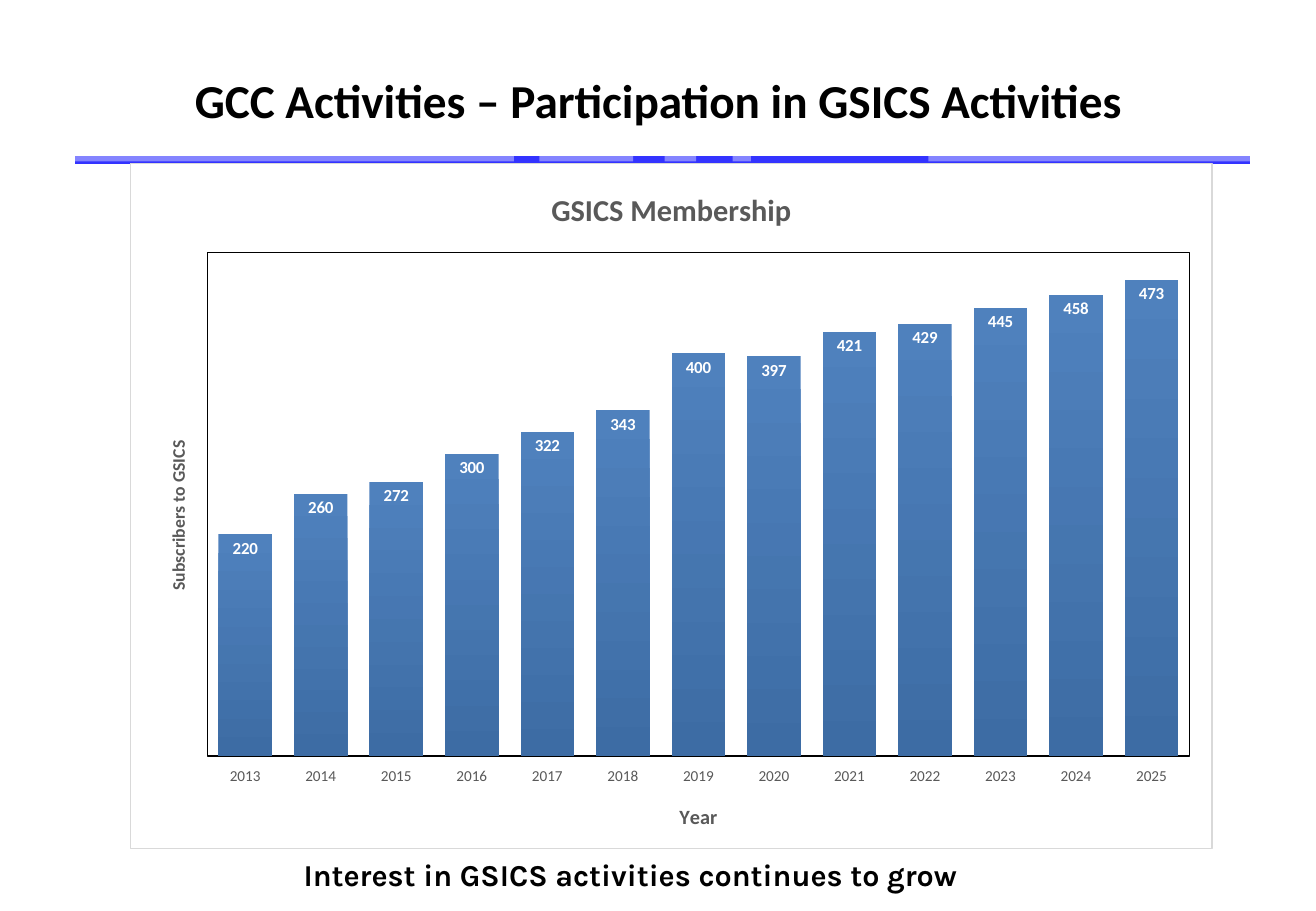
from lxml.etree import SubElement
from pptx import Presentation
from pptx.chart.data import CategoryChartData
from pptx.dml.color import RGBColor
from pptx.enum.chart import XL_CHART_TYPE, XL_LABEL_POSITION, XL_TICK_LABEL_POSITION, XL_TICK_MARK
from pptx.enum.shapes import MSO_CONNECTOR, MSO_SHAPE
from pptx.enum.text import MSO_ANCHOR, PP_ALIGN
from pptx.oxml import parse_xml
from pptx.oxml.ns import nsdecls, qn
from pptx.util import Inches, Pt

WIDTH, HEIGHT = 10.83, 7.5
MEMBERS = dict(zip(range(2013, 2026),
                   [220, 260, 272, 300, 322, 343, 400, 397, 421, 429, 445, 458, 473]))
VEILS = [(0.01, 4.22), (4.44, 0.77), (5.47, 0.26), (6.03, 0.15), (7.64, 3.2)]


def color(value):
    """Turn a hex string into a colour."""
    return RGBColor.from_string(value)


def style_font(font, size, fill, bold=False, name="Calibri"):
    """Set the look of a font."""
    font.name, font.size, font.bold = name, Pt(size), bold
    font.color.rgb = color(fill)


def add_text(slide, box, text, size, align, anchor, name="Calibri"):
    """Place one bold black line of text in a box."""
    frame = slide.shapes.add_textbox(*map(Inches, box)).text_frame
    frame.word_wrap = True
    frame.vertical_anchor = anchor
    paragraph = frame.paragraphs[0]
    paragraph.text = text
    paragraph.alignment = align
    style_font(paragraph.font, size, "000000", True, name)


def add_rule(slide, box):
    """Draw the blue rule and the pale veils that lighten parts of it."""
    left, top, width, height = box
    middle = Inches(top + height)
    line = slide.shapes.add_connector(
        MSO_CONNECTOR.STRAIGHT, Inches(left), middle, Inches(left + width), middle)
    line.line.color.rgb = color("3333FF")
    line.line.width = Pt(4.5)
    SubElement(line._element.spPr, qn("a:effectLst"))
    for veil_left, veil_width in VEILS:
        veil = slide.shapes.add_shape(MSO_SHAPE.RECTANGLE, *map(
            Inches, (veil_left, top, veil_width, height + 0.01)))
        veil.shadow.inherit = False
        veil.line.fill.background()
        veil.fill.solid()
        veil.fill.fore_color.rgb = color("FFFFFF")
        tint = veil._element.spPr.find(".//" + qn("a:srgbClr"))
        SubElement(tint, qn("a:alpha"), val="40000")


def add_title(owner, text, size):
    """Give a chart or an axis its grey title and return the title."""
    title = owner.chart_title if hasattr(owner, "chart_title") else owner.axis_title
    paragraph = title.text_frame.paragraphs[0]
    paragraph.text = text
    style_font(paragraph.font, size, "595959", True)
    return title


def set_layout(element, index, **shares):
    """Fix the place of a chart part as shares of the chart."""
    for old in element.findall(qn("c:layout")):
        element.remove(old)
    layout = parse_xml(f'<c:layout {nsdecls("c")}/>')
    manual = SubElement(layout, qn("c:manualLayout"))
    if "w" in shares:
        SubElement(manual, qn("c:layoutTarget"), val="inner")
    for mode in ("xMode", "yMode"):
        SubElement(manual, qn("c:" + mode), val="edge")
    for key, share in shares.items():
        SubElement(manual, qn("c:" + key), val=str(share))
    element.insert(index, layout)


def frame_xml(line, width):
    """Return the properties of a white area with a thin outline."""
    return parse_xml(
        f'<c:spPr {nsdecls("c", "a")}><a:solidFill><a:srgbClr val="FFFFFF"/></a:solidFill>'
        f'<a:ln w="{Pt(width)}"><a:solidFill><a:srgbClr val="{line}"/></a:solidFill></a:ln></c:spPr>')


def add_membership_chart(slide, box):
    """Place the column chart of members per year."""
    data = CategoryChartData()
    data.categories = [str(year) for year in MEMBERS]
    data.add_series("Series 1", MEMBERS.values())
    chart = slide.shapes.add_chart(
        XL_CHART_TYPE.COLUMN_CLUSTERED, *map(Inches, box), data).chart
    style_font(chart.font, 10, "000000")
    chart.has_legend = False
    add_title(chart, "GSICS Membership", 18)

    years, members = chart.category_axis, chart.value_axis
    add_title(years, "Year", 12)
    style_font(years.tick_labels.font, 9, "595959")
    years.major_tick_mark = XL_TICK_MARK.NONE
    years.tick_label_position = XL_TICK_LABEL_POSITION.LOW
    years.format.line.fill.background()
    members.minimum_scale, members.maximum_scale = 0, 500
    members.has_major_gridlines = False
    members.visible = False
    title = add_title(members, "Subscribers to GSICS", 10.5)
    body = title._element.find(".//" + qn("a:bodyPr"))
    body.set("rot", "-5400000")
    body.set("vert", "horz")
    set_layout(title._element, 1, x=0.03, y=0.4)

    plot = chart.plots[0]
    plot.gap_width = 41
    plot.vary_by_categories = False
    fill = plot.series[0].format.fill
    fill.gradient()
    fill.gradient_angle = 270
    for stop, value in zip(fill.gradient_stops, ("4F81BD", "3D6CA4")):
        stop.color.rgb = color(value)
    plot.has_data_labels = True
    labels = plot.data_labels
    labels.show_value = True
    labels.position = XL_LABEL_POSITION.INSIDE_END
    style_font(labels.font, 10, "FFFFFF", True)

    space = chart._chartSpace
    area = space.find(".//" + qn("c:plotArea"))
    set_layout(area, 0, x=0.071, y=0.13, w=0.908, h=0.735)
    area.append(frame_xml("000000", 0.75))
    space.find(qn("c:chart")).addnext(frame_xml("D9D9D9", 0.75))


def main():
    """Build the slide and save it."""
    presentation = Presentation()
    presentation.slide_width, presentation.slide_height = Inches(WIDTH), Inches(HEIGHT)
    slide = presentation.slides.add_slide(presentation.slide_layouts[6])
    add_rule(slide, (0.62, 1.19, 9.67, 0.13))
    add_text(slide, (0.54, 0.3, 9.75, 1.04), "GCC Activities – Participation in GSICS Activities",
             28, PP_ALIGN.CENTER, MSO_ANCHOR.MIDDLE)
    add_text(slide, (2.4, 7, 6.43, 0.4), "Interest in GSICS activities continues to grow",
             18, PP_ALIGN.LEFT, MSO_ANCHOR.TOP, "Karla")
    add_membership_chart(slide, (1.07, 1.34, 8.91, 5.65))
    presentation.save("out.pptx")


if __name__ == "__main__":
    main()
